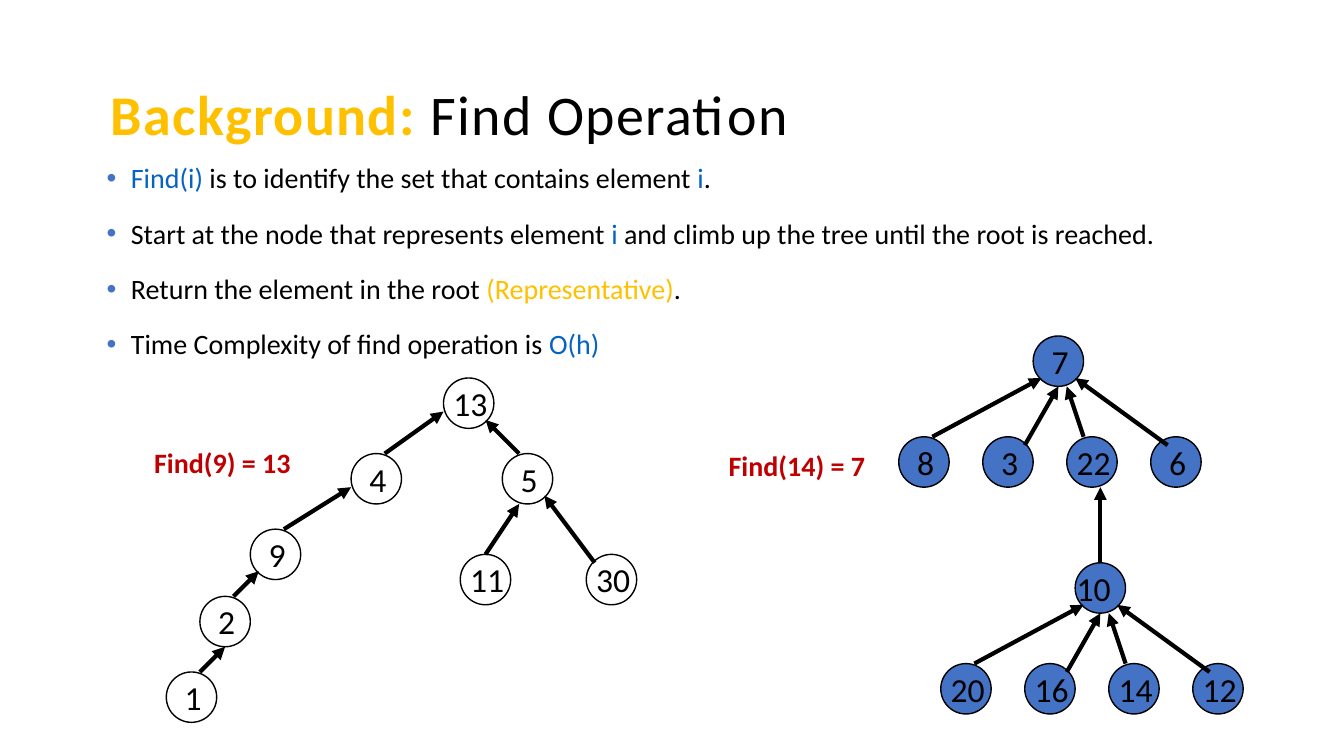
from dataclasses import dataclass

from lxml import etree
from pptx import Presentation
from pptx.dml.color import RGBColor
from pptx.enum.shapes import MSO_CONNECTOR, MSO_SHAPE
from pptx.enum.text import MSO_ANCHOR, MSO_AUTO_SIZE, PP_ALIGN
from pptx.oxml.ns import qn
from pptx.util import Pt

STRAIGHT = MSO_CONNECTOR.STRAIGHT
OVAL = MSO_SHAPE.OVAL
BOTTOM, TOP = MSO_ANCHOR.BOTTOM, MSO_ANCHOR.TOP
NO_FIT, GROW = MSO_AUTO_SIZE.NONE, MSO_AUTO_SIZE.SHAPE_TO_FIT_TEXT
LEFT = PP_ALIGN.LEFT


@dataclass(frozen=True)
class Theme:
    """Colours, font and type sizes of the slide."""
    font: str = "Calibri"
    black: str = "000000"
    blue: str = "4472C4"
    link: str = "0563C1"
    gold: str = "FFC000"
    red: str = "C00000"
    title_size: int = 40
    body_size: int = 20
    node_size: int = 24


@dataclass(frozen=True)
class Box:
    """A region in points."""
    left: float
    top: float
    width: float
    height: float

    def lengths(self):
        """Return the four lengths for a shape call."""
        return Pt(self.left), Pt(self.top), Pt(self.width), Pt(self.height)

    def inner(self, x, y, width, height):
        """Return a box placed relative to this one."""
        return Box(self.left + x, self.top + y, width, height)


THEME = Theme()
NODE = 36

BULLETS = [
    [("Find(i)", THEME.link), (" is to identify the set that contains element ", THEME.black),
     ("i", THEME.link), (".", THEME.black)],
    [("Start at the node that represents element ", THEME.black), ("i", THEME.link),
     (" and climb up the tree until the root is reached.", THEME.black)],
    [("Return the element in the root ", THEME.black), ("(Representative)", THEME.gold),
     (".", THEME.black)],
    [("Time Complexity of find operation is ", THEME.black), ("O(h)", THEME.link)],
]

NINE_NODES = {"13": (198, 0), "4": (132, 54), "5": (240, 54), "9": (60, 108),
              "11": (210, 126), "30": (300, 126), "2": (24, 156), "1": (0, 210)}
NINE_EDGES = [("13", "4", (0, 24), (24, 0)), ("4", "9", (0, 24), (24, 0)),
              ("13", "5", (30, 30), (12, 0)), ("9", "2", (6, 30), (24, 0)),
              ("5", "11", (12, 36), (18, 0)), ("5", "30", (30, 30), (6, 6)),
              ("2", "1", (18, 36), (24, 0))]
FAN_ENDS = [((6, 30), (24, 0)), ((18, 36), (30, 6)),
            ((24, 36), (12, 0)), ((30, 30), (12, 6))]


def fan(root, children, x, y):
    """Return nodes and edges of a root above a row of four children."""
    nodes = {root: (x + 96, y)}
    nodes.update({child: (x + 60 * i, y + 72) for i, child in enumerate(children)})
    edges = [(root, child, *ends) for child, ends in zip(children, FAN_ENDS)]
    return nodes, edges


def add_span(para, text, color, size, bold=False):
    """Add one formatted run to a paragraph."""
    span = para.add_run()
    span.text = text
    span.font.name = THEME.font
    span.font.size = Pt(size)
    span.font.bold = bold
    span.font.color.rgb = RGBColor.from_string(color)
    return span


def place(holder, box, anchor):
    """Move a placeholder into a box and return its text frame."""
    holder.left, holder.top, holder.width, holder.height = box.lengths()
    frame = holder.text_frame
    frame.auto_size = NO_FIT
    frame.word_wrap = True
    frame.vertical_anchor = anchor
    return frame


def add_title(page, box):
    """Fill the title placeholder."""
    para = place(page.shapes.title, box, BOTTOM).paragraphs[0]
    para.alignment = LEFT
    para.line_spacing = 0.8
    for text, color, bold in (("Background: ", THEME.gold, True),
                              ("Find Operation", THEME.black, False)):
        span = add_span(para, text, color, THEME.title_size, bold)
        span.font._element.set("spc", "100")


def add_bullet(para):
    """Give a paragraph a hanging blue bullet."""
    props = para._p.get_or_add_pPr()
    props.set("marL", str(Pt(17.3)))
    props.set("indent", str(-Pt(17.3)))
    color = etree.SubElement(props, qn("a:buClr"))
    etree.SubElement(color, qn("a:srgbClr"), val=THEME.blue)
    etree.SubElement(props, qn("a:buFont"), typeface="Arial")
    etree.SubElement(props, qn("a:buChar"), char="•")


def add_body(page, box):
    """Fill the body placeholder with the bullet list."""
    frame = place(page.placeholders[1], box, TOP)
    for i, parts in enumerate(BULLETS):
        para = frame.add_paragraph() if i else frame.paragraphs[0]
        add_bullet(para)
        para.line_spacing = 0.9
        para.space_before = Pt(18 if i else 0)
        for text, color in parts:
            add_span(para, text, color, THEME.body_size)


def add_label(group, box, text, color, size, bold=False, fit=GROW):
    """Add a one-line text box."""
    frame = group.shapes.add_textbox(*box.lengths()).text_frame
    frame.word_wrap = True
    frame.auto_size = fit
    add_span(frame.paragraphs[0], text, color, size, bold)


def add_node(group, box, text, fill, shift):
    """Add a circle and its number."""
    circle = group.shapes.add_shape(OVAL, *box.lengths())
    circle.shadow.inherit = False
    circle.line.color.rgb = RGBColor.from_string(THEME.black)
    circle.line.width = Pt(1)
    if fill:
        circle.fill.solid()
        circle.fill.fore_color.rgb = RGBColor.from_string(fill)
    else:
        circle.fill.background()
    width = 24 if len(text) == 1 else 54
    add_label(group, box.inner(shift, 0, width, NODE), text, THEME.black, THEME.node_size)


def add_arrow(group, head, tail):
    """Add a thick line with its arrowhead at the parent end."""
    arrow = group.shapes.add_connector(STRAIGHT, *map(Pt, head + tail))
    arrow.line.color.rgb = RGBColor.from_string(THEME.black)
    arrow.line.width = Pt(3)
    etree.SubElement(arrow.line._get_or_add_ln(), qn("a:headEnd"), type="triangle")
    etree.SubElement(arrow._element.spPr, qn("a:effectLst"))


def add_tree(page, box, nodes, edges, caption, caption_at, fill=None, shifts=None):
    """Draw a grouped tree with a caption, relative to its box."""
    group = page.shapes.add_group_shape()
    for text, (x, y) in nodes.items():
        shift = (shifts or {}).get(text, 6 if len(text) == 1 else 0)
        add_node(group, box.inner(x, y, NODE, NODE), text, fill, shift)
    for parent, child, head, tail in edges:
        ends = [(box.left + nodes[name][0] + x, box.top + nodes[name][1] + y)
                for name, (x, y) in ((parent, head), (child, tail))]
        add_arrow(group, *ends)
    add_label(group, box.inner(*caption_at, 141, 36.7), caption, THEME.red,
              THEME.body_size, bold=True, fit=NO_FIT)


def main():
    """Build and save the deck."""
    deck = Presentation()
    deck.slide_width, deck.slide_height = Pt(960), Pt(540)
    page = deck.slides.add_slide(deck.slide_layouts[1])
    add_title(page, Box(72, 36, 684.7, 72))
    add_body(page, Box(69, 113.8, 890.6, 159))
    add_tree(page, Box(118.8, 270, 336, 246), NINE_NODES, NINE_EDGES,
             "Find(9) = 13", (-15.8, 44.6))
    upper, upper_edges = fan("7", ["8", "3", "22", "6"], 0, 0)
    lower, lower_edges = fan("10", ["20", "16", "14", "12"], 30, 162)
    joint = ("22", "10", (24, 36), (18, 0))
    add_tree(page, Box(642, 240, 246, 270), {**upper, **lower},
             [*upper_edges, *lower_edges, joint], "Find(14) = 7", (-128.6, 76.8),
             fill=THEME.blue, shifts={"10": -6})
    deck.save("out.pptx")


if __name__ == "__main__":
    main()
